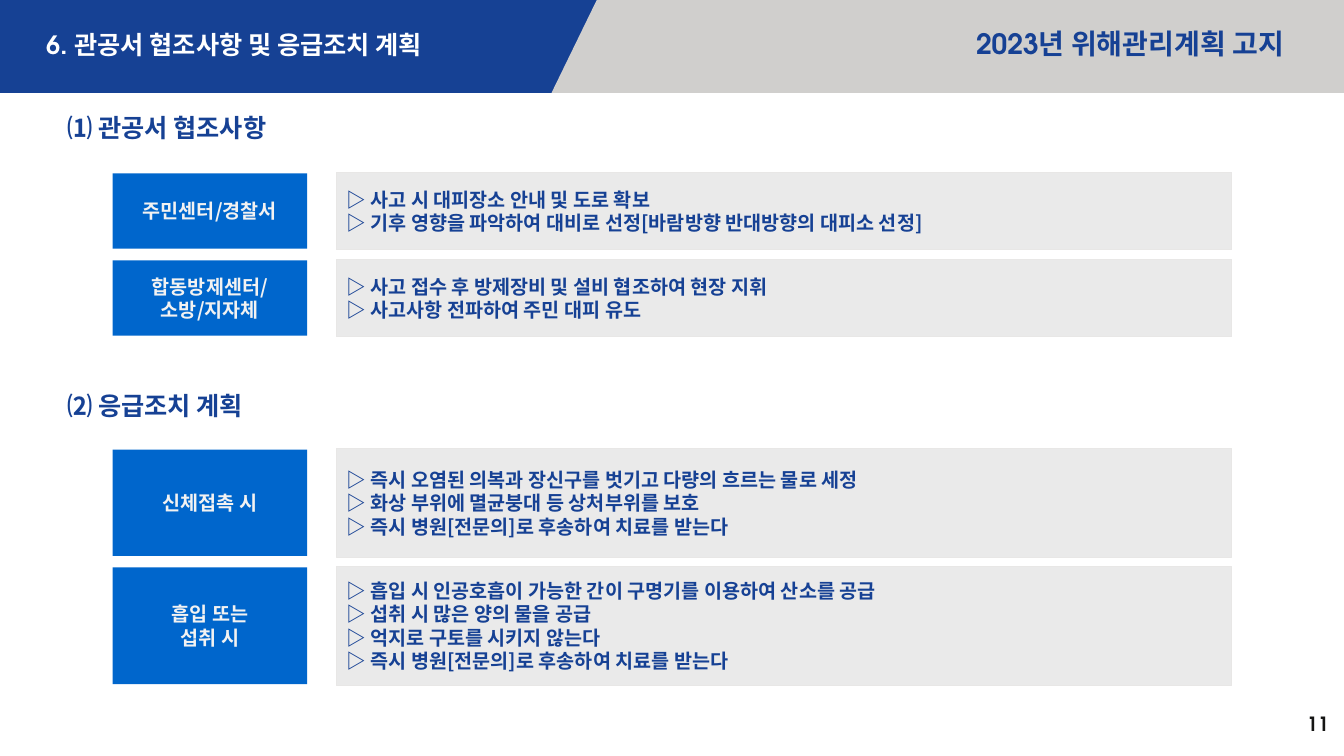
from lxml import etree
from pptx import Presentation
from pptx.dml.color import RGBColor
from pptx.enum import shapes, text
from pptx.oxml.ns import qn
from pptx.util import Cm, Pt

COLOURS = {
    "navy": "164194", "blue": "0066CC", "silver": "D0CFCD", "panel": "EAEAEA",
    "edge": "E8E7E6", "pale": "F2F2F2", "white": "FFFFFF", "ink": "151514",
}
KOREAN = "Noto Sans CJK KR"
LATIN = "TeX Gyre Adventor"
WIDTH, HEIGHT, BAR_HEIGHT = 33.87, 19.05, 2.34
LABEL_LEFT, LABEL_WIDTH = 2.84, 4.9
LIST_LEFT, LIST_WIDTH = 8.48, 22.56

# Each section: heading, heading top, rows of (top, height, label lines, list lines)
SECTIONS = [
    ("⑴ 관공서 협조사항", 2.36, [
        (4.34, 1.96, ["주민센터/경찰서"], [
            "사고 시 대피장소 안내 및 도로 확보",
            "기후 영향을 파악하여 대비로 선정[바람방향 반대방향의 대피소 선정]"]),
        (6.53, 1.96, ["합동방제센터/", "소방/지자체"], [
            "사고 접수 후 방제장비 및 설비 협조하여 현장 지휘",
            "사고사항 전파하여 주민 대피 유도"]),
    ]),
    ("⑵ 응급조치 계획", 9.37, [
        (11.3, 2.74, ["신체접촉 시"], [
            "즉시 오염된 의복과 장신구를 벗기고 다량의 흐르는 물로 세정",
            "화상 부위에 멸균붕대 등 상처부위를 보호",
            "즉시 병원[전문의]로 후송하여 치료를 받는다"]),
        (14.27, 3.0, ["흡입 또는", "섭취 시"], [
            "흡입 시 인공호흡이 가능한 간이 구명기를 이용하여 산소를 공급",
            "섭취 시 많은 양의 물을 공급",
            "억지로 구토를 시키지 않는다",
            "즉시 병원[전문의]로 후송하여 치료를 받는다"]),
    ]),
]


def colour(name):
    return RGBColor.from_string(COLOURS[name])


def write(shape, lines, size=14, ink="navy", font=KOREAN, align="LEFT", spacing=None):
    frame = shape.text_frame
    frame.word_wrap = True
    frame.auto_size = text.MSO_AUTO_SIZE.NONE
    frame.vertical_anchor = text.MSO_ANCHOR.MIDDLE
    for index, line in enumerate(lines):
        paragraph = frame.paragraphs[0] if index == 0 else frame.add_paragraph()
        paragraph.alignment = getattr(text.PP_ALIGN, align)
        paragraph.line_spacing = spacing or Pt(size * 1.2)
        paragraph.space_before = Pt(0)
        if shape.is_placeholder:
            properties = paragraph._p.get_or_add_pPr()
            properties.set("marL", "0")
            properties.set("indent", "0")
            etree.SubElement(properties, qn("a:buNone"))
        run = paragraph.add_run()
        run.text = line
        run.font.size = Pt(size)
        run.font.bold = True
        run.font.name = font
        run.font.color.rgb = colour(ink)
        east_asian = etree.SubElement(run.font._element, qn("a:ea"))
        east_asian.set("typeface", KOREAN)


def paint(shape, fill, line=None):
    shape.shadow.inherit = False
    shape.fill.solid()
    shape.fill.fore_color.rgb = colour(fill)
    if line:
        shape.line.color.rgb = colour(line)
        shape.line.width = Pt(0.75)
    else:
        shape.line.fill.background()


def add_box(slide, left, top, width, height, fill, line=None):
    shape = slide.shapes.add_shape(
        shapes.MSO_SHAPE.RECTANGLE, Cm(left), Cm(top), Cm(width), Cm(height))
    paint(shape, fill, line)
    return shape


def add_text(slide, left, top, width, height, lines, **style):
    box = slide.shapes.add_textbox(Cm(left), Cm(top), Cm(width), Cm(height))
    write(box, lines, **style)


def place_header(slide, placeholder, left, width, line, **style):
    placeholder.left, placeholder.top = Cm(left), Cm(0.48)
    placeholder.width, placeholder.height = Cm(width), Cm(1.35)
    write(placeholder, [line], font=LATIN, spacing=0.9, **style)
    # Bring in front of the header bar
    slide.shapes.element.append(placeholder.element)


def add_header(slide):
    add_box(slide, 0, 0, WIDTH, BAR_HEIGHT, "navy")
    builder = slide.shapes.build_freeform(Cm(WIDTH), 0)
    builder.add_line_segments([
        (Cm(15.04), 0), (Cm(13.9), Cm(BAR_HEIGHT)), (Cm(WIDTH), Cm(BAR_HEIGHT))])
    paint(builder.convert_to_shape(), "silver")
    place_header(slide, slide.placeholders[1], 15.39, 17.22,
                 "2023년 위해관리계획 고지", size=20, align="RIGHT")
    place_header(slide, slide.shapes.title, 0.91, 12.7,
                 "6. 관공서 협조사항 및 응급조치 계획", size=18, ink="white")


def add_row(slide, top, height, label, items):
    panel = add_box(slide, LIST_LEFT, top, LIST_WIDTH, height, "panel", "edge")
    write(panel, [f"▷ {item}" for item in items])
    tag = add_box(slide, LABEL_LEFT, top + 0.03, LABEL_WIDTH, height - 0.06, "blue")
    write(tag, label, ink="pale", align="CENTER")


def main():
    presentation = Presentation()
    presentation.slide_width, presentation.slide_height = Cm(WIDTH), Cm(HEIGHT)
    slide = presentation.slides.add_slide(presentation.slide_layouts[1])

    add_header(slide)

    # Sections with their labelled rows
    for heading, heading_top, rows in SECTIONS:
        add_text(slide, 1.45, heading_top, 27.69, 1.7, [heading], size=18)
        for row in rows:
            add_row(slide, *row)

    # Page number
    add_text(slide, 32.56, 17.88, 1.3, 0.69, ["11"],
             ink="ink", font=LATIN, align="CENTER")

    presentation.save("out.pptx")


if __name__ == "__main__":
    main()
